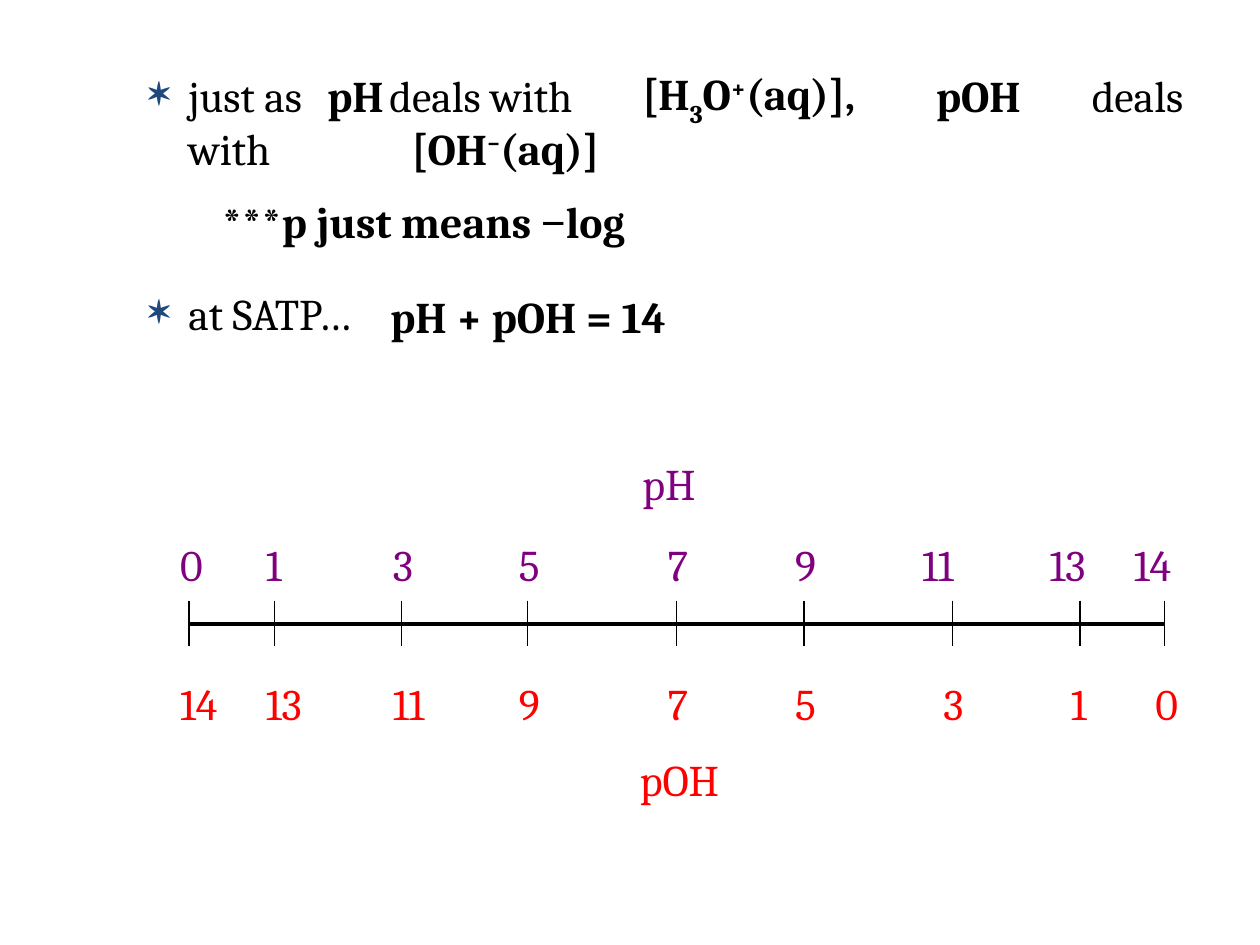
from dataclasses import dataclass

from lxml import etree
from pptx import Presentation
from pptx import util as u
from pptx.dml.color import RGBColor
from pptx.enum import shapes, text
from pptx.oxml import ns

BLACK = RGBColor(0x00, 0x00, 0x00)
NAVY = RGBColor(0x1F, 0x49, 0x7D)
PURPLE = RGBColor(0x80, 0x00, 0x80)
RED = RGBColor(0xFF, 0x00, 0x00)

FONT = "Cambria"
SIZE = u.Pt(25)
HANG = u.Cm(0.81)
AXIS_Y = 12.57
TICK_HALF = 0.46
DIGIT_SHIFT = 0.43
PH_TOP = 10.72
POH_TOP = 13.51
LABEL_HEIGHT = 1.4
NEUTRAL_SUM = 14


@dataclass(frozen=True)
class Span:
    words: str
    baseline: int = 0
    font: str = FONT


@dataclass(frozen=True)
class Label:
    left: float
    top: float
    width: float
    height: float
    spans: tuple[Span, ...]
    color: RGBColor = BLACK
    bold: bool = False
    wrap: bool = True
    before: float = 0
    bullet: bool = False
    tabs: tuple[float, ...] = ()


@dataclass(frozen=True)
class Tick:
    ph: int
    x: float
    ph_width: float = 1.7
    poh_width: float = 1.7


LABELS = (
    Label(2.74, 1.27, 22.66, 2.36, (Span("just as\tdeals with\tdeals with"),),
          before=5, bullet=True, tabs=(4.86, 19.02)),
    Label(4.24, 3.81, 13.97, 1.32,
          (Span("***p just means "), Span("−", font="Times New Roman"), Span("log")),
          bold=True, before=12.5),
    Label(6.35, 1.27, 1.91, 1.32, (Span("pH"),), bold=True, wrap=False),
    Label(12.7, 1.22, 5.79, 1.32,
          (Span("[H"), Span("3", -30), Span("O"), Span("+", 30), Span("(aq)],")),
          bold=True, wrap=False),
    Label(18.62, 1.27, 2.62, 1.32, (Span("pOH"),), bold=True, wrap=False),
    Label(8.05, 2.34, 5.03, 1.32,
          (Span("[OH"), Span("−", 30, "Calibri"), Span("(aq)]")),
          bold=True, wrap=False),
    Label(2.74, 5.66, 22.66, 1.32, (Span("at SATP…"),), before=5, bullet=True),
    Label(7.62, 5.72, 7.16, 1.32, (Span("pH + pOH = 14"),), bold=True, wrap=False),
    Label(12.65, 15.06, 4.27, 1.85, (Span("pOH"),), RED),
    Label(12.7, 9.09, 7.26, 1.85, (Span("pH"),), PURPLE),
)

TICKS = (
    Tick(0, 3.81, ph_width=1.3, poh_width=2.13),
    Tick(1, 5.54),
    Tick(3, 8.1),
    Tick(5, 10.64),
    Tick(7, 13.64, ph_width=1.3, poh_width=1.3),
    Tick(9, 16.21),
    Tick(11, 19.2),
    Tick(13, 21.77),
    Tick(14, 23.47),
)


def add_bullet(para, tabs: tuple[float, ...]) -> None:
    props = para._p.get_or_add_pPr()
    props.set("marL", str(HANG))
    props.set("indent", str(-HANG))
    color = etree.SubElement(props, ns.qn("a:buClr"))
    etree.SubElement(color, ns.qn("a:srgbClr"), val=str(NAVY))
    etree.SubElement(props, ns.qn("a:buChar"), char="✶")
    if tabs:
        stops = etree.SubElement(props, ns.qn("a:tabLst"))
        for position in tabs:
            etree.SubElement(stops, ns.qn("a:tab"), pos=str(u.Cm(position)), algn="l")


def add_label(page, label: Label) -> None:
    box = page.shapes.add_textbox(u.Cm(label.left), u.Cm(label.top),
                                  u.Cm(label.width), u.Cm(label.height))
    frame = box.text_frame
    frame.word_wrap = label.wrap
    frame.auto_size = text.MSO_AUTO_SIZE.NONE
    para = frame.paragraphs[0]
    if label.before:
        para.space_before = u.Pt(label.before)
    if label.bullet:
        add_bullet(para, label.tabs)
    para.font.size = SIZE
    para.font.bold = label.bold
    para.font.color.rgb = label.color
    for span in label.spans:
        run = para.add_run()
        run.text = span.words
        run.font.name = span.font
        run.font.size = SIZE
        run.font.bold = label.bold
        run.font.color.rgb = label.color
        if span.baseline:
            run.font._element.set("baseline", str(span.baseline * 1000))


def add_line(group, x1: float, y1: float, x2: float, y2: float, weight: float) -> None:
    line = group.shapes.add_connector(shapes.MSO_CONNECTOR.STRAIGHT,
                                      u.Cm(x1), u.Cm(y1), u.Cm(x2), u.Cm(y2))
    line.line.color.rgb = BLACK
    line.line.width = u.Pt(weight)
    etree.SubElement(line._element.spPr, ns.qn("a:effectLst"))


def add_scale(page) -> None:
    group = page.shapes.add_group_shape()
    add_line(group, TICKS[0].x, AXIS_Y, TICKS[-1].x, AXIS_Y, 2.25)
    for tick in TICKS:
        add_line(group, tick.x, AXIS_Y - TICK_HALF, tick.x, AXIS_Y + TICK_HALF, 0.75)
        ph, poh = str(tick.ph), str(NEUTRAL_SUM - tick.ph)
        add_label(page, Label(tick.x - DIGIT_SHIFT * len(ph), PH_TOP, tick.ph_width,
                              LABEL_HEIGHT, (Span(ph),), PURPLE))
        add_label(page, Label(tick.x - DIGIT_SHIFT, POH_TOP, tick.poh_width,
                              LABEL_HEIGHT, (Span(poh),), RED))


def main() -> None:
    deck = Presentation()
    deck.slide_width, deck.slide_height = u.Cm(25.4), u.Cm(19.05)
    page = deck.slides.add_slide(deck.slide_layouts[6])
    for label in LABELS:
        add_label(page, label)
    add_scale(page)
    deck.save("out.pptx")


if __name__ == "__main__":
    main()
